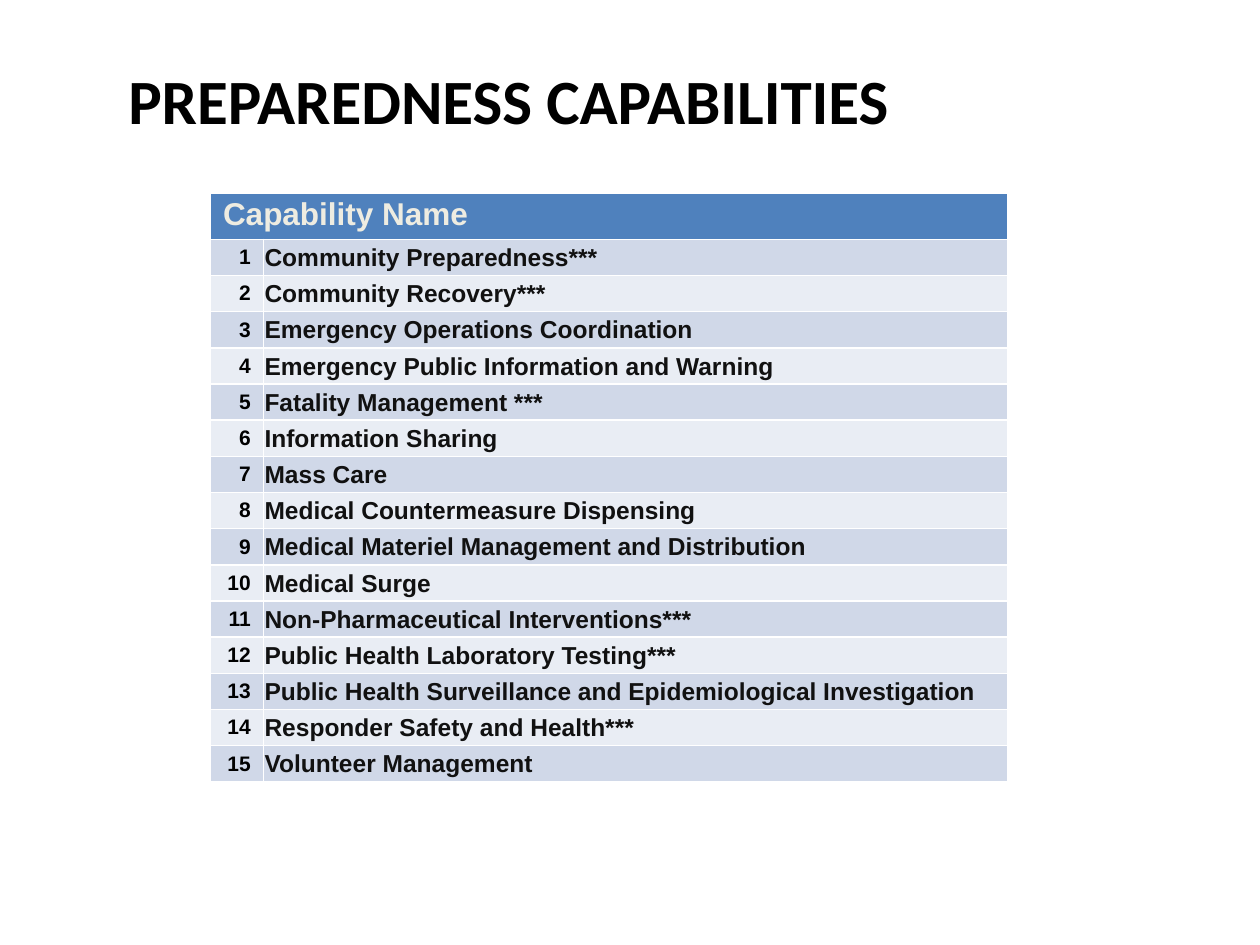
from dataclasses import dataclass

from pptx import Presentation
from pptx.dml.color import RGBColor
from pptx.enum.text import MSO_ANCHOR, PP_ALIGN
from pptx.util import Inches, Pt

LEFT, RIGHT = PP_ALIGN.LEFT, PP_ALIGN.RIGHT
TOP, MIDDLE = MSO_ANCHOR.TOP, MSO_ANCHOR.MIDDLE
BLANK_LAYOUT = 6

COLORS = {
    "title": "000000",
    "header_fill": "4F81BD",
    "header_text": "EEECE1",
    "number": "000000",
    "name": "111111",
    "odd_band": "D0D8E8",
    "even_band": "E9EDF4",
}

CAPABILITIES = [
    "Community Preparedness***",
    "Community Recovery***",
    "Emergency Operations Coordination",
    "Emergency Public Information and Warning",
    "Fatality Management ***",
    "Information Sharing",
    "Mass Care",
    "Medical Countermeasure Dispensing",
    "Medical Materiel Management and Distribution",
    "Medical Surge",
    "Non-Pharmaceutical Interventions***",
    "Public Health Laboratory Testing***",
    "Public Health Surveillance and Epidemiological Investigation",
    "Responder Safety and Health***",
    "Volunteer Management",
]

COLUMN_WIDTHS = (0.42, 5.91)
HEADER_HEIGHT = 0.37
TABLE_HEIGHT = 4.68


@dataclass(frozen=True)
class TextStyle:
    size: int
    color: str
    font: str = "Arial"
    align: PP_ALIGN = LEFT
    anchor: MSO_ANCHOR = MIDDLE
    margins: tuple[float, float, float, float] = (0.1, 0.04, 0.1, 0.04)


TITLE = TextStyle(36, "title", "Calibri", anchor=TOP, margins=(0.1, 0.07, 0.1, 0.05))
HEADER = TextStyle(18, "header_text", anchor=TOP, margins=(0.1, 0.03, 0.1, 0.03))
NUMBER = TextStyle(12, "number", align=RIGHT)
NAME = TextStyle(14, "name", margins=(0.01, 0.01, 0.01, 0))


def rgb(name: str) -> RGBColor:
    return RGBColor.from_string(COLORS[name])


def write(holder, text_frame, text: str, style: TextStyle) -> None:
    """Put styled text in a frame; holder owns the margins and the anchor."""
    sides = ("margin_left", "margin_top", "margin_right", "margin_bottom")
    layout = dict(zip(sides, map(Inches, style.margins)))
    layout["vertical_anchor"] = style.anchor
    for key, value in layout.items():
        setattr(holder, key, value)
    para = text_frame.paragraphs[0]
    para.alignment = style.align
    span = para.add_run()
    span.text = text
    for key, value in {"name": style.font, "size": Pt(style.size), "bold": True}.items():
        setattr(span.font, key, value)
    span.font.color.rgb = rgb(style.color)


def fill_cell(cell, text: str, style: TextStyle, fill: str) -> None:
    cell.fill.solid()
    cell.fill.fore_color.rgb = rgb(fill)
    write(cell, cell.text_frame, text, style)


def add_title(page, text: str) -> None:
    box = page.shapes.add_textbox(Inches(0.92), Inches(0.42), Inches(8.5), Inches(1.49))
    box.text_frame.word_wrap = True
    write(box.text_frame, box.text_frame, text, TITLE)


def add_capability_table(page) -> None:
    count = len(CAPABILITIES)
    table = page.shapes.add_table(
        count + 1, len(COLUMN_WIDTHS), Inches(1.67), Inches(1.53),
        Inches(sum(COLUMN_WIDTHS)), Inches(TABLE_HEIGHT),
    ).table
    table.first_row = table.horz_banding = False
    for column, width in zip(table.columns, COLUMN_WIDTHS):
        column.width = Inches(width)
    row_height = (TABLE_HEIGHT - HEADER_HEIGHT) / count
    for index, row in enumerate(table.rows):
        row.height = Inches(row_height if index else HEADER_HEIGHT)

    table.cell(0, 0).merge(table.cell(0, 1))
    fill_cell(table.cell(0, 0), "Capability Name", HEADER, "header_fill")
    for number, name in enumerate(CAPABILITIES, start=1):
        band = "odd_band" if number % 2 else "even_band"
        fill_cell(table.cell(number, 0), str(number), NUMBER, band)
        fill_cell(table.cell(number, 1), name, NAME, band)


def main() -> None:
    deck = Presentation()
    deck.slide_width, deck.slide_height = Inches(10), Inches(7.5)
    page = deck.slides.add_slide(deck.slide_layouts[BLANK_LAYOUT])
    add_title(page, "PREPAREDNESS CAPABILITIES")
    add_capability_table(page)
    deck.save("out.pptx")


if __name__ == "__main__":
    main()
